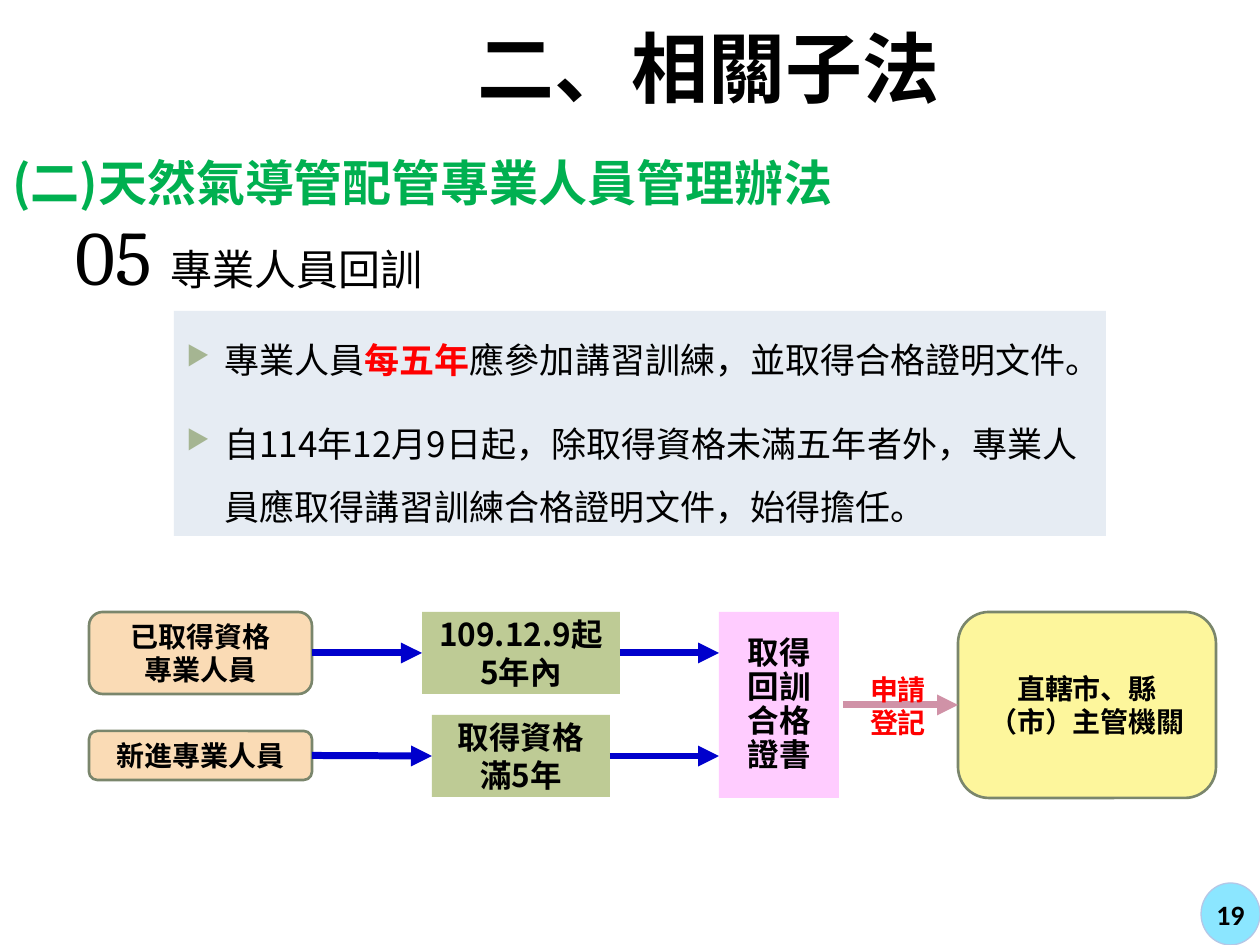
from lxml import etree
from pptx import Presentation
from pptx.dml.color import RGBColor
from pptx.enum.shapes import MSO_CONNECTOR, MSO_SHAPE as SHAPE
from pptx.enum.text import MSO_ANCHOR as ANCHOR, PP_ALIGN as ALIGN
from pptx.oxml.ns import qn
from pptx.util import Pt

PX = 914400 / 126
CJK = "Noto Sans CJK SC"
BLACK = RGBColor(0x00, 0x00, 0x00)
RED = RGBColor(0xFF, 0x00, 0x00)
GREEN = RGBColor(0x00, 0xB0, 0x50)
BLUE = RGBColor(0x00, 0x00, 0xCC)
ROSE = RGBColor(0xD0, 0x92, 0xA7)
OLIVE = RGBColor(0x7A, 0x86, 0x6C)
PEACH = RGBColor(0xFA, 0xDB, 0xB5)
SAGE = RGBColor(0xBE, 0xCB, 0x95)
PINK = RGBColor(0xFF, 0xCC, 0xFF)
YELLOW = RGBColor(0xFD, 0xF6, 0x9C)
PALE = RGBColor(0xE6, 0xEC, 0xF3)
CYAN = RGBColor(0x8B, 0xE6, 0xFF)
PERIWINKLE = RGBColor(0xB4, 0xC7, 0xE7)


def emu(*lengths):
    """Turn px lengths into EMU."""
    return [round(n * PX) for n in lengths]


def style(p, size, color=BLACK, bold=True, font=CJK, align=ALIGN.CENTER):
    """Format a paragraph's runs, for Latin and East Asian text alike."""
    p.alignment = align
    for r in p.runs:
        r.font.size, r.font.bold, r.font.name = Pt(size), bold, font
        r.font.color.rgb = color
        etree.SubElement(r._r.rPr, qn("a:ea"), typeface=CJK)


prs = Presentation()
prs.slide_width, prs.slide_height = emu(1260, 945)
s = prs.slides.add_slide(prs.slide_layouts[5])

# Title
title = s.shapes.title
title.left, title.top, title.width, title.height = emu(158, 3, 1102, 140)
tf = title.text_frame
tf.text = "二、相關子法"
tf.vertical_anchor = ANCHOR.MIDDLE
tf.paragraphs[0].line_spacing = 0.9
style(tf.paragraphs[0], 44)

# Text boxes: section heading and topic
tf = s.shapes.add_textbox(*emu(0, 152, 970, 59)).text_frame
tf.word_wrap = True
tf.vertical_anchor = ANCHOR.MIDDLE
tf.text = "(二)天然氣導管配管專業人員管理辦法"
style(tf.paragraphs[0], 28, GREEN, align=ALIGN.LEFT)

tf = s.shapes.add_textbox(*emu(63, 195, 1134, 680)).text_frame
tf.word_wrap = True
p = tf.paragraphs[0]
for text in ("05", " ", "專業人員回訓"):
    p.add_run().text = text
style(p, 24, bold=False, font="Cambria", align=ALIGN.LEFT)
p.runs[0].font.size = Pt(44)
p.runs[1].font.size = Pt(48)

# Retraining rules
rules = s.shapes.add_shape(SHAPE.RECTANGLE, *emu(174, 311, 932, 225))
rules.shadow.inherit = False
rules.fill.solid()
rules.fill.fore_color.rgb = PALE
rules.line.fill.background()
tf = rules.text_frame
tf.word_wrap = True
tf.vertical_anchor = ANCHOR.TOP
RULES = [
    ("專業人員", "每五年", "應參加講習訓練，並取得合格證明文件。"),
    ("自114年12月9日起，除取得資格未滿五年者外，專業人員應取得講習訓練合格證明文件，始得擔任。",),
]
for i, parts in enumerate(RULES):
    p = tf.add_paragraph() if i else tf.paragraphs[0]
    for text in parts:
        p.add_run().text = text
    p.line_spacing = 1.5
    p.space_after = Pt(12)
    pPr = p._p.get_or_add_pPr()
    indent = emu(38)[0]
    pPr.set("marL", str(indent))
    pPr.set("indent", str(-indent))
    bullet_color = etree.SubElement(pPr, qn("a:buClr"))
    etree.SubElement(bullet_color, qn("a:srgbClr"), val="A5B592")
    etree.SubElement(pPr, qn("a:buSzPct"), val="76000")
    etree.SubElement(pPr, qn("a:buChar"), char="▶")
    style(p, 20, bold=False, align=ALIGN.LEFT)
period = tf.paragraphs[0].runs[1].font
period.bold = True
period.color.rgb = RED

# Flow boxes and page number: name, shape, place, fill, line, inset, size, text
ROUND, RECT = SHAPE.ROUNDED_RECTANGLE, SHAPE.RECTANGLE
BOXES = [
    ("new", ROUND, (89, 731, 223, 49), PEACH, OLIVE, 6, 16, ["新進專業人員"]),
    ("qualified", ROUND, (89, 612, 223, 82), PEACH, OLIVE, 6, 16, ["已取得資格", "專業人員"]),
    ("after five", RECT, (432, 715, 178, 82), SAGE, None, 15, 18, ["取得資格", "滿5年"]),
    ("within five", RECT, (422, 612, 198, 82), SAGE, None, 15, 18, ["109.12.9起5年內"]),
    ("certificate", RECT, (719, 612, 120, 186), PINK, None, 15, 18, ["取得回訓合格證書"]),
    ("authority", ROUND, (958, 612, 258, 186), YELLOW, OLIVE, 12, 16, ["直轄市、縣（市）主管機關"]),
    ("page", SHAPE.OVAL, (1201, 883, 59, 62), CYAN, PERIWINKLE, 0, 16, ["19"]),
]
boxes = {}
for name, kind, place, fill, line, inset, size, lines in BOXES:
    sp = boxes[name] = s.shapes.add_shape(kind, *emu(*place))
    sp.shadow.inherit = False
    sp.fill.solid()
    sp.fill.fore_color.rgb = fill
    if line:
        sp.line.color.rgb = line
        sp.line.width = Pt(0.75 if name == "page" else 1.5)
    else:
        sp.line.fill.background()
    tf = sp.text_frame
    tf.word_wrap = True
    tf.vertical_anchor = ANCHOR.MIDDLE
    tf.margin_left = tf.margin_right = emu(inset)[0]
    tf.margin_top = tf.margin_bottom = emu(min(inset, 6))[0]
    tf.text = "\n".join(lines)
    for p in tf.paragraphs:
        style(p, size, font="Calibri" if name == "page" else CJK)
boxes["certificate"].text_frame.paragraphs[0].line_spacing = 0.9

# Arrows: start, end, colour, box joined at its right, box joined at its left
ARROWS = [
    ((312, 653), (422, 653), BLUE, "qualified", "within five"),
    ((312, 756), (432, 756), BLUE, "new", "after five"),
    ((620, 653), (719, 653), BLUE, "within five", None),
    ((610, 756), (719, 756), BLUE, "after five", None),
    ((843, 705), (958, 705), ROSE, None, "authority"),
]
for start, end, color, source, target in ARROWS:
    arrow = s.shapes.add_connector(MSO_CONNECTOR.STRAIGHT, *emu(*start, *end))
    if source:
        arrow.begin_connect(boxes[source], 3)
    if target:
        arrow.end_connect(boxes[target], 1)
    arrow.line.color.rgb = color
    arrow.line.width = Pt(4)
    etree.SubElement(arrow.line._get_or_add_ln(), qn("a:tailEnd"), type="triangle")
    etree.SubElement(arrow._element.spPr, qn("a:effectLst"))

# Label across the last arrow
tf = s.shapes.add_textbox(*emu(848, 699, 100, 14)).text_frame
tf.word_wrap = True
tf.vertical_anchor = ANCHOR.MIDDLE
tf.text = "申請\n登記"
for p in tf.paragraphs:
    style(p, 16, RED)

prs.save("out.pptx")
